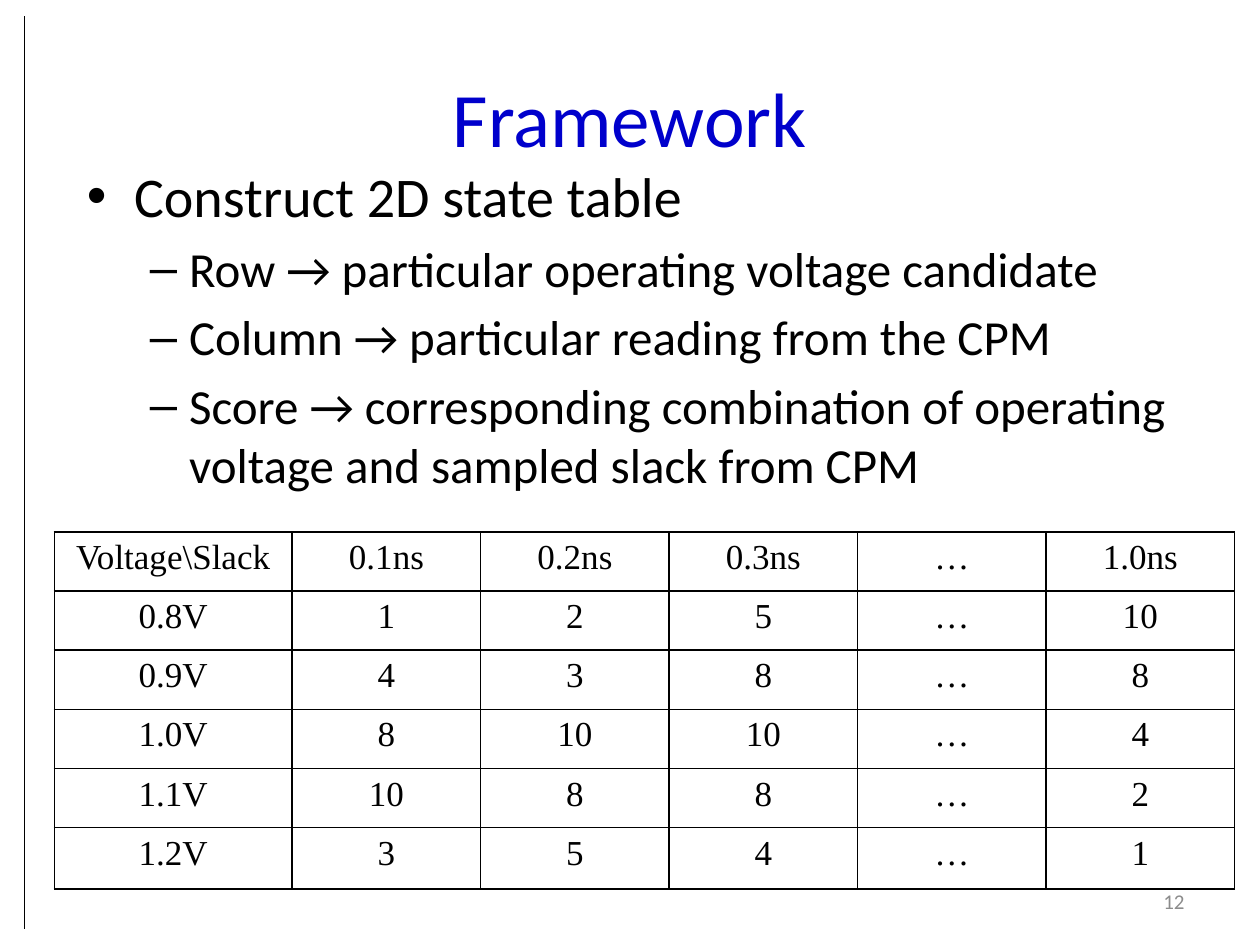
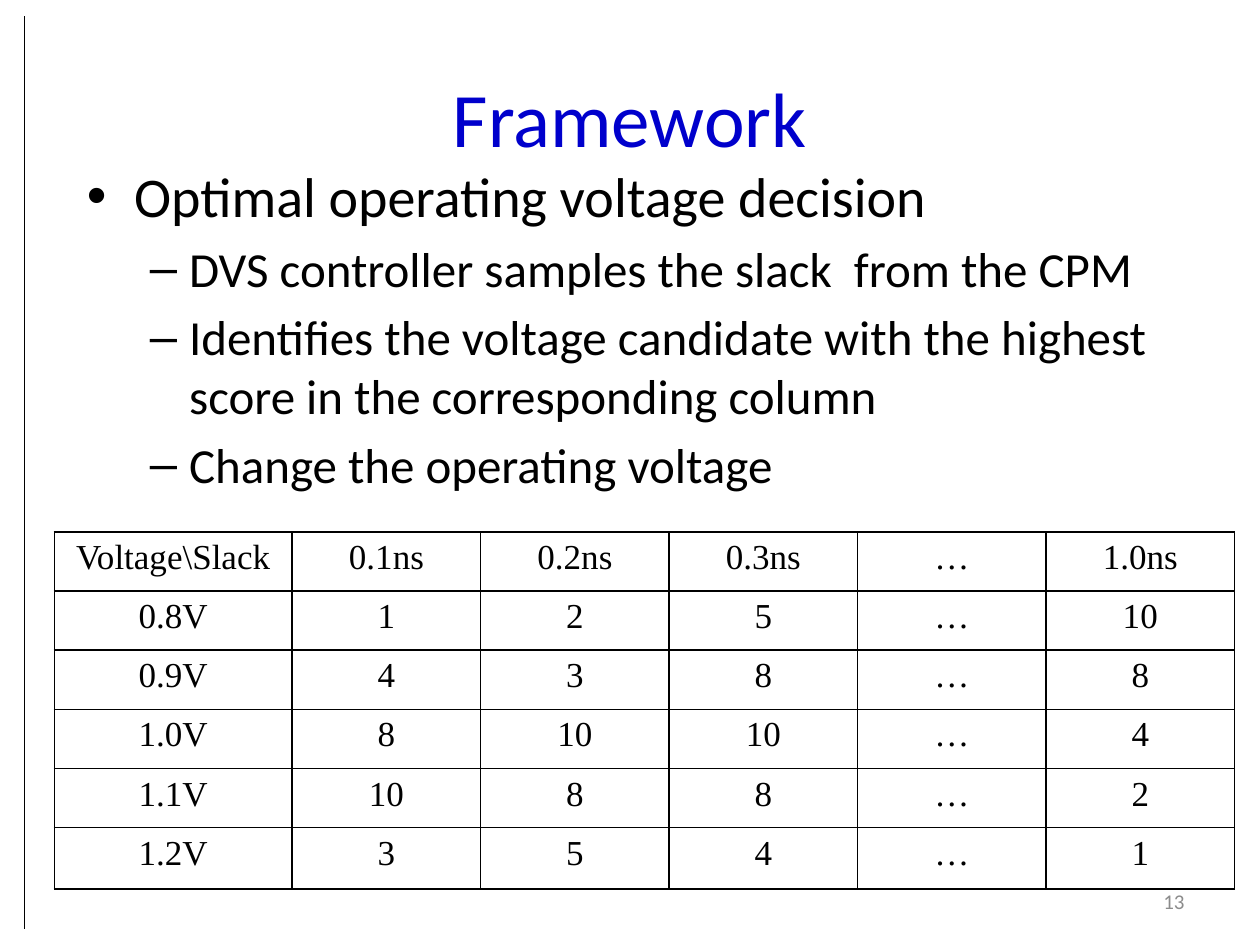
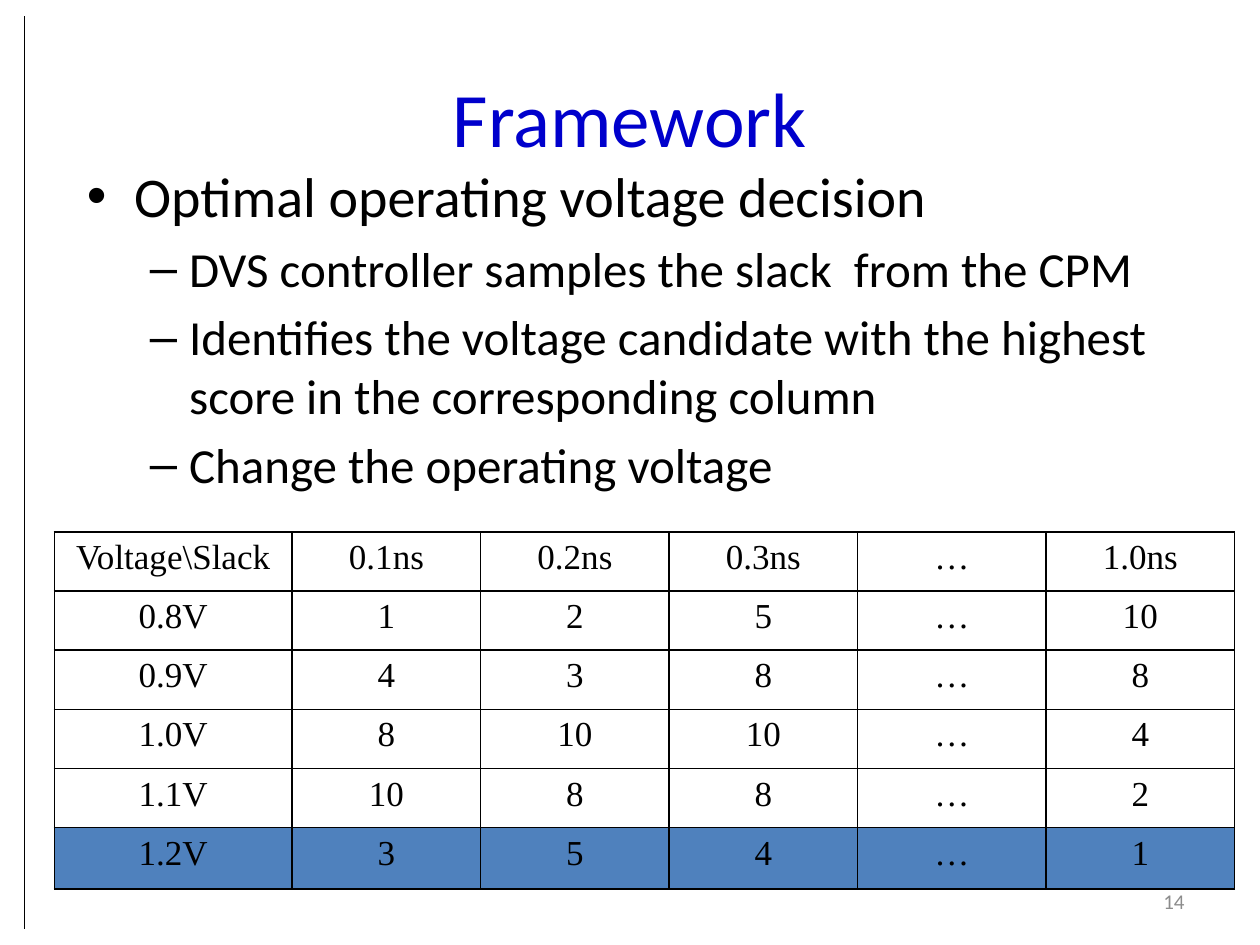
from lxml import etree
from pptx import Presentation
from pptx import util as u
from pptx.dml import color
from pptx.enum import shapes, text
from pptx.oxml import ns

BLACK, BLUE, GREY, HIGHLIGHT = "000000", "0000CC", "8C8C8C", "4F81BD"
BODY_FONT, TABLE_FONT = "Calibri", "Times New Roman"
LEFT, CENTER, RIGHT = (text.PP_ALIGN.LEFT, text.PP_ALIGN.CENTER, text.PP_ALIGN.RIGHT)

LEVELS = [
    {"bullet": "•", "size": 32, "margin": 27, "indent": -27},
    {"bullet": "–", "size": 28, "margin": 58.5, "indent": -22.5},
]
COL_WIDTHS = [136] + [107.7] * 5
ROW_HEIGHTS = [33.8] * 5 + [35]

SCORES = [
    ["Voltage\\Slack", "0.1ns", "0.2ns", "0.3ns", "…", "1.0ns"],
    ["0.8V", "1", "2", "5", "…", "10"],
    ["0.9V", "4", "3", "8", "…", "8"],
    ["1.0V", "8", "10", "10", "…", "4"],
    ["1.1V", "10", "8", "8", "…", "2"],
    ["1.2V", "3", "5", "4", "…", "1"],
]
STATE_TABLE = [
    "Construct 2D state table",
    "Row → particular operating voltage candidate",
    "Column → particular reading from the CPM",
    "Score → corresponding combination of operating voltage and sampled slack from CPM",
]
VOLTAGE_DECISION = [
    "Optimal operating voltage decision",
    "DVS controller samples the slack  from the CPM",
    "Identifies the voltage candidate with the highest score in the corresponding column",
    "Change the operating voltage",
]


def rgb(value):
    """Return the colour for a hex string."""
    return color.RGBColor.from_string(value)


def sub(parent, tag, **attrs):
    """Append a DrawingML element to the parent."""
    return etree.SubElement(parent, ns.qn(tag), attrs)


class Deck:
    """Hold the presentation style and the current slide."""

    def __init__(self):
        """Start an empty 10 by 7.5 inch presentation."""
        self.prs = Presentation()
        self.prs.slide_width, self.prs.slide_height = u.Pt(720), u.Pt(540)
        self.slide = None

    def add_slide(self, title, number):
        """Add a slide with its side rule, title and number."""
        self.slide = self.prs.slides.add_slide(self.prs.slide_layouts[6])
        self.rule(14.2, 9.2, 14.2, 530.8)
        self.label(title, (36, 21.6, 648, 90), 44, BLUE, CENTER)
        self.label(str(number), (516, 500.4, 168, 28.8), 12, GREY, RIGHT)

    def rule(self, x1, y1, x2, y2):
        """Draw a thin straight line."""
        line = self.slide.shapes.add_connector(
            shapes.MSO_CONNECTOR.STRAIGHT, u.Pt(x1), u.Pt(y1), u.Pt(x2), u.Pt(y2))
        line.line.color.rgb = rgb(BLACK)
        line.line.width = u.Pt(0.75)
        sub(line._element.spPr, "a:effectLst")

    def frame(self, box):
        """Add a wrapping text box and return its text frame."""
        sp = self.slide.shapes.add_textbox(*map(u.Pt, box))
        sp.text_frame.word_wrap = True
        return sp.text_frame

    def style(self, p, size, colour=BLACK, align=LEFT, font=BODY_FONT):
        """Format a paragraph and its runs."""
        p.alignment = align
        for r in p.runs:
            r.font.size, r.font.name = u.Pt(size), font
            r.font.color.rgb = rgb(colour)

    def label(self, words, box, size, colour, align):
        """Add one vertically centred line of text."""
        tf = self.frame(box)
        tf.vertical_anchor = text.MSO_ANCHOR.MIDDLE
        tf.text = words
        self.style(tf.paragraphs[0], size, colour, align)

    def bullets(self, lines):
        """Add a heading bullet followed by its sub-points."""
        tf = self.frame((42.5, 88.6, 635, 383.8))
        tf.text = "\n".join(lines)
        for i, p in enumerate(tf.paragraphs):
            p.level = min(i, 1)
            level = LEVELS[p.level]
            self.style(p, level["size"])
            p.space_before = u.Pt(level["size"] * 0.2)
            pPr = p._p.get_or_add_pPr()
            pPr.set("marL", str(u.Pt(level["margin"])))
            pPr.set("indent", str(u.Pt(level["indent"])))
            sub(pPr, "a:buFont", typeface="Arial")
            sub(pPr, "a:buChar", char=level["bullet"])

    def table(self, rows, marked=None):
        """Add the score table, filling the marked row."""
        tbl = self.slide.shapes.add_table(
            len(rows), len(rows[0]), u.Pt(31), u.Pt(304),
            u.Pt(sum(COL_WIDTHS)), u.Pt(sum(ROW_HEIGHTS))).table
        tbl.first_row = tbl.horz_banding = False
        for col, width in zip(tbl.columns, COL_WIDTHS):
            col.width = u.Pt(width)
        for i, (row, height) in enumerate(zip(tbl.rows, ROW_HEIGHTS)):
            row.height = u.Pt(height)
            for cell, words in zip(row.cells, rows[i]):
                cell.text = words
                self.style(cell.text_frame.paragraphs[0], 20, BLACK, CENTER, TABLE_FONT)
                self.borders(cell)
                if i == marked:
                    cell.fill.solid()
                    cell.fill.fore_color.rgb = rgb(HIGHLIGHT)
                else:
                    cell.fill.background()

    def borders(self, cell):
        """Outline all four sides of a cell."""
        tcPr = cell._tc.get_or_add_tcPr()
        for side in "LRTB":
            ln = sub(tcPr, f"a:ln{side}", w=str(u.Pt(1)))
            sub(sub(ln, "a:solidFill"), "a:srgbClr", val=BLACK)


def main():
    """Build the three framework slides."""
    deck = Deck()
    pages = [(STATE_TABLE, None), (VOLTAGE_DECISION, None),
             (VOLTAGE_DECISION, len(SCORES) - 1)]
    for number, (lines, marked) in enumerate(pages, start=12):
        deck.add_slide("Framework", number)
        deck.bullets(lines)
        deck.table(SCORES, marked)
    deck.prs.save("out.pptx")


if __name__ == "__main__":
    main()
